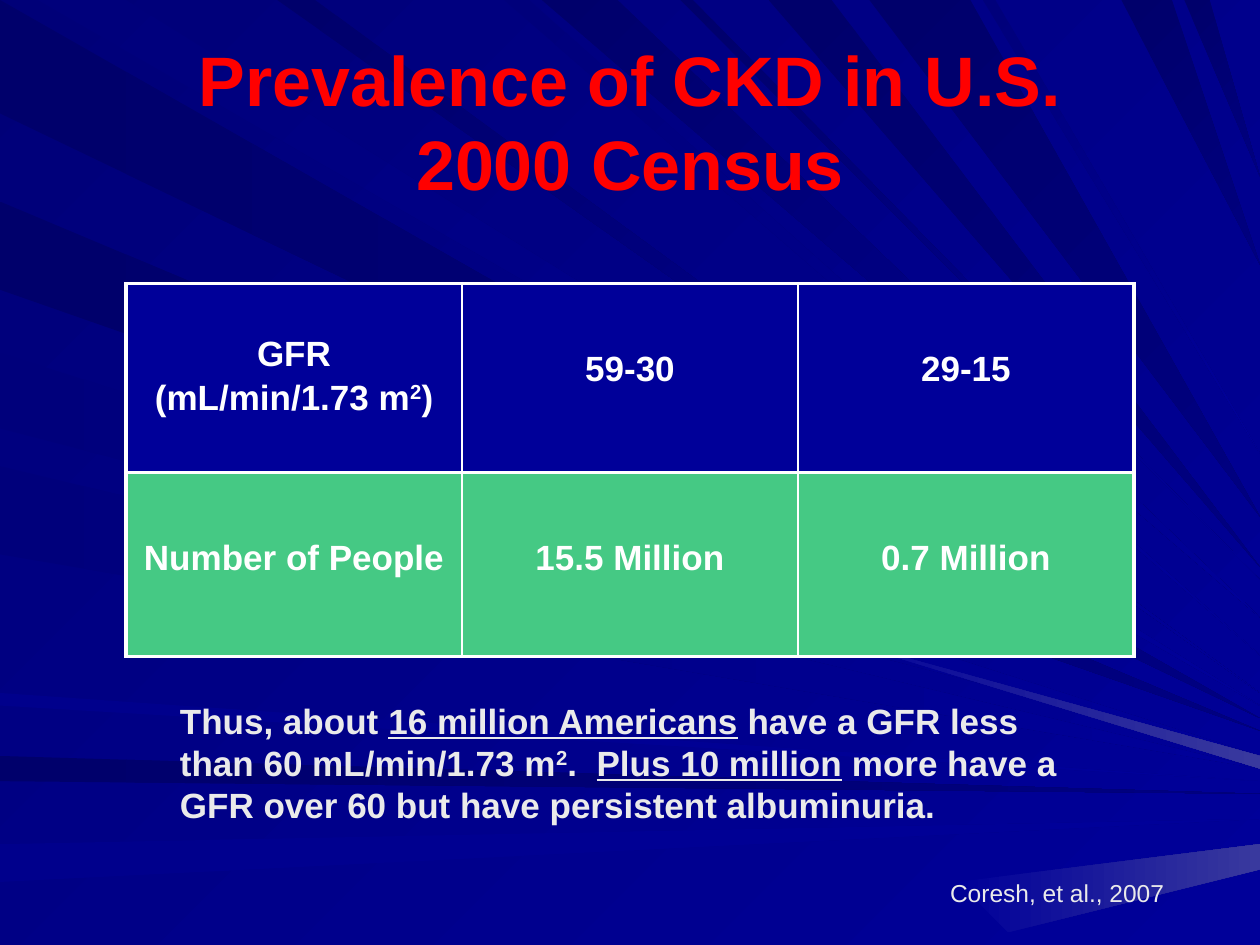
from lxml import etree
from pptx import Presentation
from pptx.dml.color import RGBColor
from pptx.enum.text import MSO_ANCHOR, PP_ALIGN
from pptx.oxml.ns import qn
from pptx.util import Inches, Pt

LEFT, CENTER, RIGHT = PP_ALIGN.LEFT, PP_ALIGN.CENTER, PP_ALIGN.RIGHT
TOP, MIDDLE = MSO_ANCHOR.TOP, MSO_ANCHOR.MIDDLE
FONT = "Arial"
NAVY, DEEP, GREEN = "000099", "000080", "45C984"
DARK, DIM, SOFT, GLOW = "00006B", "00007B", "00008C", "39399E"
WHITE, PALE, RED = "FFFFFF", "EAEAEA", "FF0000"
THICK, THIN = 2.25, 1
PAGE_WIDTH = 10

# Start and end along the page edge, tip height on the right edge, colours
LEFT_RAYS = [
    (0, 0.9, 5.7, DARK, DEEP),
    (6, 6.2, 6.3, DARK, DEEP),
    (6.7, 7, 6.5, SOFT, NAVY),
    (1.6, 2.3, 5.8, DARK, DEEP),
    (2.8, 3.4, 6, DIM, NAVY),
    (3.7, 4.4, 6.1, DIM, NAVY),
    (5.5, 5.6, 6.2, SOFT, NAVY),
]
TOP_RAYS = [
    (0.3, 1, 5.6, DIM, NAVY),
    (2.2, 2.5, 5.5, DARK, NAVY),
    (4, 4.2, 5.2, DIM, NAVY),
    (4.3, 4.9, 4.9, DARK, NAVY),
    (5.4, 5.5, 4.6, DARK, NAVY),
    (6.1, 6.6, 4.5, DARK, DEEP),
    (6.9, 7.7, 4.1, DARK, DEEP),
    (7.8, 7.9, 3.6, DIM, NAVY),
    (8.9, 9.3, 2.1, DARK, DEEP),
    (9.4, 9.6, 1.4, DARK, DEEP),
]
BRIGHT_RAYS = [
    [(6.4, 5), (10, 6), (10, 6.1)],
    [(7.6, 7), (10, 6.7), (10, 6.9), (8, 7.4)],
]

TITLE = [[("Prevalence of CKD in U.S. 2000 Census", "")]]
SUMMARY = [[
    ("Thus, about ", ""),
    ("16 million Americans", "underline"),
    (" have a GFR less than 60 mL/min/1.73 m", ""),
    ("2", "superscript"),
    (".  ", ""),
    ("Plus 10 million", "underline"),
    (" more have a GFR over 60 but have persistent albuminuria.", ""),
]]
CITATION = [[("Coresh, et al., 2007", "")]]
GFR_LABEL = [[("GFR", "")], [("(mL/min/1.73 m", ""), ("2", "superscript"), (")", "")]]
CELLS = [
    [GFR_LABEL, [[("59-30", "")]], [[("29-15", "")]]],
    [[[("Number of People", "")]], [[("15.5 Million", "")]], [[("0.7 Million", "")]]],
]


def color(value):
    return RGBColor.from_string(value)


def paint(fill, start, end, angle=0):
    if start == end:
        fill.solid()
        fill.fore_color.rgb = color(start)
        return
    fill.gradient()
    fill.gradient_angle = -angle
    for stop, value in zip(fill.gradient_stops, (start, end)):
        stop.color.rgb = color(value)


def add_ray(page, points, start, end, angle=0):
    outline = [(Inches(x), Inches(y)) for x, y in points]
    builder = page.shapes.build_freeform(*outline[0])
    builder.add_line_segments(outline[1:], close=True)
    ray = builder.convert_to_shape()
    ray.shadow.inherit = False
    ray.line.fill.background()
    paint(ray.fill, start, end, angle)


def add_rays(page):
    for near, far, tip, start, end in LEFT_RAYS:
        add_ray(page, [(0, near), (0, far), (PAGE_WIDTH, tip)], start, end)
    for near, far, tip, start, end in TOP_RAYS:
        add_ray(page, [(near, 0), (far, 0), (PAGE_WIDTH, tip)], start, end, 45)
    for points in BRIGHT_RAYS:
        add_ray(page, points, NAVY, GLOW)


def write(frame, paragraphs, size, ink, align, bold):
    for index, pieces in enumerate(paragraphs):
        para = frame.add_paragraph() if index else frame.paragraphs[0]
        para.alignment = align
        if index:
            para.space_before = Pt(2.5)
        for text, style in pieces:
            span = para.add_run()
            span.text = text
            span.font.name = FONT
            span.font.size = Pt(size)
            span.font.bold = bold
            span.font.color.rgb = color(ink)
            if style == "underline":
                span.font.underline = True
            elif style == "superscript":
                span.font._element.set("baseline", "30000")


def add_text(page, area, paragraphs, size, ink, align, anchor=TOP, bold=True):
    box = page.shapes.add_textbox(*map(Inches, area))
    frame = box.text_frame
    frame.word_wrap = True
    frame.vertical_anchor = anchor
    write(frame, paragraphs, size, ink, align, bold)


def set_border(cell, side, width):
    line = etree.SubElement(cell._tc.get_or_add_tcPr(), qn("a:" + side), w=str(Pt(width)))
    fill = etree.SubElement(line, qn("a:solidFill"))
    etree.SubElement(fill, qn("a:srgbClr"), val=WHITE)


def add_prevalence_table(page):
    frame = page.shapes.add_table(2, 3, Inches(1), Inches(2.25), Inches(8), Inches(2.96))
    table = frame.table
    table.first_row = False
    table.horz_banding = False
    for row, height in zip(table.rows, (1.5, 1.46)):
        row.height = Inches(height)
    for row, (contents, shade) in enumerate(zip(CELLS, (NAVY, GREEN))):
        for column, paragraphs in enumerate(contents):
            cell = table.cell(row, column)
            set_border(cell, "lnL", THIN if column else THICK)
            set_border(cell, "lnR", THIN if column < 2 else THICK)
            set_border(cell, "lnT", THICK)
            set_border(cell, "lnB", THICK)
            paint(cell.fill, shade, shade)
            cell.margin_top = Inches(0.41 if len(paragraphs) > 1 else 0.53)
            write(cell.text_frame, paragraphs, 20, WHITE, CENTER, True)


def main():
    deck = Presentation()
    deck.slide_width = Inches(PAGE_WIDTH)
    deck.slide_height = Inches(7.5)
    page = deck.slides.add_slide(deck.slide_layouts[6])
    paint(page.background.fill, "000078", NAVY, 45)
    add_rays(page)
    add_text(page, (1, 0.33, 8, 1.25), TITLE, 40, RED, CENTER, anchor=MIDDLE)
    add_text(page, (1.33, 5.5, 7.33, 1.49), SUMMARY, 20, PALE, LEFT)
    add_text(page, (1.67, 6.92, 7.67, 0.33), CITATION, 14, PALE, RIGHT, bold=False)
    add_prevalence_table(page)
    deck.save("out.pptx")


if __name__ == "__main__":
    main()
